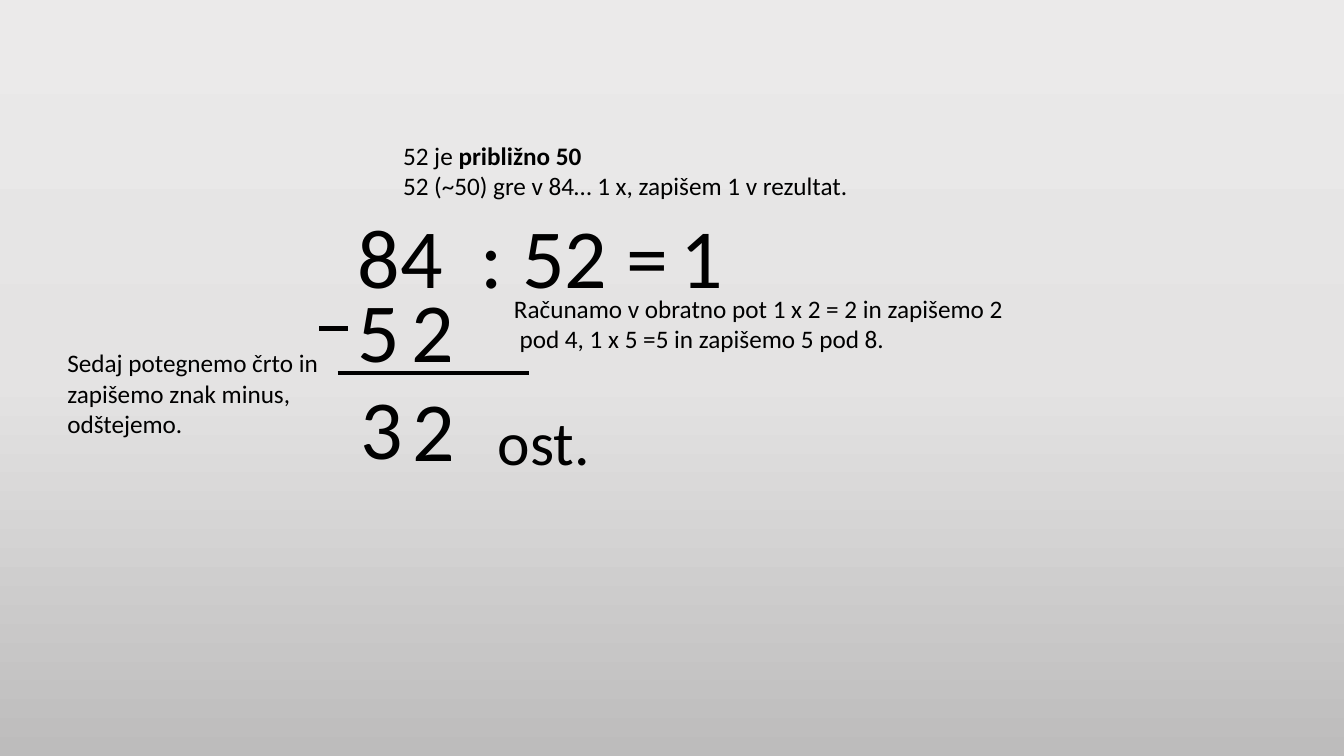
from copy import deepcopy

from lxml.etree import SubElement
from pptx import Presentation
from pptx.dml.color import RGBColor
from pptx.enum.shapes import MSO_CONNECTOR
from pptx.enum.text import MSO_AUTO_SIZE
from pptx.oxml.ns import qn
from pptx.util import Pt

COLORS = {"ink": "000000", "top": "EBEAEA", "middle": "E4E3E3", "bottom": "BDBCBC"}
DIGIT_SIZE, REMAINDER_SIZE, NOTE_SIZE = 60, 44, 18

presentation = Presentation()
presentation.slide_width = Pt(960)
presentation.slide_height = Pt(540)
slide = presentation.slides.add_slide(presentation.slide_layouts[6])

background = slide.background.fill
background.gradient()
background.gradient_angle = 270
stop_list = next(slide.element.iter(qn("a:gsLst")))
stop_list.insert(1, deepcopy(stop_list[0]))
for stop, name, position in zip(background.gradient_stops, ("top", "middle", "bottom"), (0, 0.5, 1)):
    stop.color.rgb = RGBColor.from_string(COLORS[name])
    stop.position = position


def add_text(left, top, width, height, size, paragraphs):
    shape = slide.shapes.add_textbox(Pt(left), Pt(top), Pt(width), Pt(height))
    frame = shape.text_frame
    frame.word_wrap = True
    frame.auto_size = MSO_AUTO_SIZE.SHAPE_TO_FIT_TEXT
    for index, pieces in enumerate(paragraphs):
        paragraph = frame.add_paragraph() if index else frame.paragraphs[0]
        for text, bold in pieces:
            run = paragraph.add_run()
            run.text = text
            run.font.color.rgb = RGBColor.from_string(COLORS["ink"])
            for attribute, value in {"name": "Calibri", "size": Pt(size), "bold": bold}.items():
                setattr(run.font, attribute, value)


calculation = [
    ("84  : 52 =", 248.4, 142.6, 243.4),
    ("1", 478.8, 142.6, 52.6),
    ("2", 286.6, 195.1, 51.8),
    ("5", 248.4, 195.1, 42.5),
    ("2", 287.3, 266.4, 61.2),
    ("3", 250.6, 265, 61.2),
]
for text, left, top, width in calculation:
    add_text(left, top, width, 80, DIGIT_SIZE, [[(text, False)]])

subtraction_line = (241.2, 378, 266.4)
minus_sign = (228.2, 248.4, 234.7)
for start, end, height in (subtraction_line, minus_sign):
    connector = slide.shapes.add_connector(MSO_CONNECTOR.STRAIGHT, Pt(start), Pt(height), Pt(end), Pt(height))
    connector.line.width = Pt(3)
    connector.line.color.rgb = RGBColor.from_string(COLORS["ink"])
    SubElement(connector.element.spPr, qn("a:effectLst"))

add_text(348.5, 285.1, 85.7, 60.5, REMAINDER_SIZE, [[("ost.", False)]])

notes = [
    (280.8, 96.5, 337, 51, [
        [("52 je ", False), ("približno 50", True)],
        [("52 (~50) gre v 84… 1 x, zapišem 1 v rezultat.", False)],
    ]),
    (360, 205.9, 363.6, 51, [
        [("Računamo v obratno pot 1 x 2 = 2 in zapišemo 2  pod 4, 1 x 5 =5 in zapišemo 5 pod 8.", False)],
    ]),
    (41, 244.8, 245.5, 72.7, [
        [("Sedaj potegnemo črto in zapišemo znak minus, odštejemo.", False)],
    ]),
]
for left, top, width, height, paragraphs in notes:
    add_text(left, top, width, height, NOTE_SIZE, paragraphs)

presentation.save("out.pptx")
